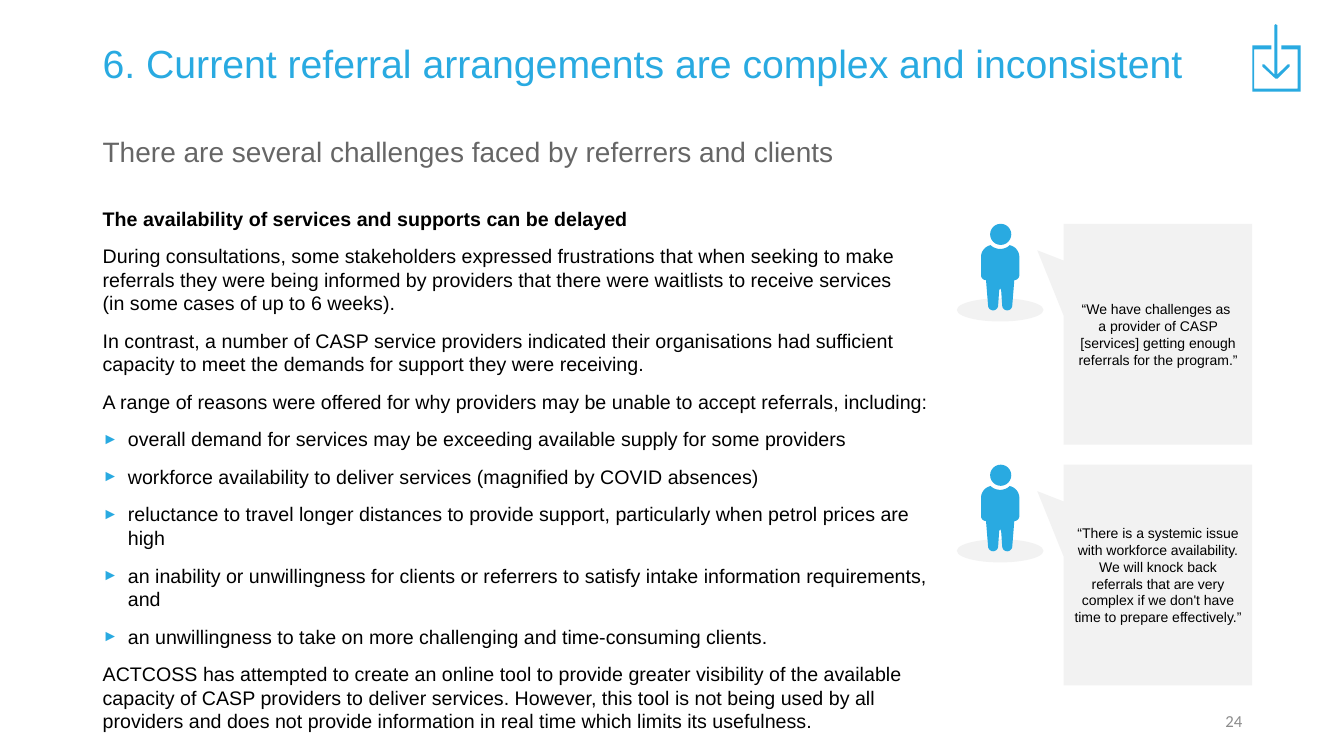
from math import cos, sin, radians
from lxml import etree
from pptx import Presentation
from pptx.dml.color import RGBColor
from pptx.enum.shapes import MSO_SHAPE as Shape
from pptx.enum.text import MSO_ANCHOR as Anchor, PP_ALIGN as Align
from pptx.oxml.ns import qn
from pptx.util import Inches, Pt

BLUE, PALE, BLACK = "29AAE1", "F2F2F2", "000000"


def paint(item, color):
    """Give a shape or font its hex colour, with no outline or shadow on shapes."""
    if hasattr(item, "shadow"):
        item.shadow.inherit = False
        item.line.fill.background()
        item.fill.solid()
        item.fill.fore_color.rgb = RGBColor.from_string(color)
    else:
        item.color.rgb = RGBColor.from_string(color)


def write(shape, lines, size, color, face="Arial", space=0, lead=1.0,
          align=Align.LEFT, anchor=Anchor.MIDDLE):
    """Fill a shape with paragraphs; a leading ► makes a bullet."""
    frame = shape.text_frame
    frame.word_wrap = True
    frame.vertical_anchor = anchor
    for i, line in enumerate(lines):
        para = frame.paragraphs[0] if i == 0 else frame.add_paragraph()
        para.text = line.removeprefix("►")
        para.alignment = align
        para.line_spacing = lead
        para.space_before = Pt(space if i else 0)
        if line.startswith("►"):
            props = para._p.get_or_add_pPr()
            props.set("marL", str(Inches(0.25)))
            props.set("indent", str(-Inches(0.25)))
            tint = etree.SubElement(props, qn("a:buClr"))
            etree.SubElement(tint, qn("a:srgbClr"), val=BLUE)
            etree.SubElement(props, qn("a:buSzPct"), val="80000")
            etree.SubElement(props, qn("a:buFont"), typeface="Arial")
            etree.SubElement(props, qn("a:buChar"), char="►")
        for run in para.runs:
            run.font.name = face
            run.font.size = Pt(size)
            paint(run.font, color)


deck = Presentation()
deck.slide_width, deck.slide_height = Inches(13.33), Inches(7.5)
slide = deck.slides.add_slide(deck.slide_layouts[6])
shapes = slide.shapes

# Headings, body and page number
title = shapes.add_textbox(Inches(0.92), Inches(0.4), Inches(11.5), Inches(0.51))
write(title, ["6. Current referral arrangements are complex and inconsistent"],
      28, BLUE, lead=0.9)

body = shapes.add_textbox(Inches(0.92), Inches(2), Inches(8.45), Inches(4.76))
write(body, [
    "The availability of services and supports can be delayed",
    "During consultations, some stakeholders expressed frustrations that when seeking to make "
    "referrals they were being informed by providers that there were waitlists to receive "
    "services \n(in some cases of up to 6 weeks).",
    "In contrast, a number of CASP service providers indicated their organisations had "
    "sufficient capacity to meet the demands for support they were receiving.",
    "A range of reasons were offered for why providers may be unable to accept referrals, "
    "including:",
    "►overall demand for services may be exceeding available supply for some providers",
    "►workforce availability to deliver services (magnified by COVID absences)",
    "►reluctance to travel longer distances to provide support, particularly when petrol "
    "prices are high",
    "►an inability or unwillingness for clients or referrers to satisfy intake information "
    "requirements, and",
    "►an unwillingness to take on more challenging and time-consuming clients.",
    "ACTCOSS has attempted to create an online tool to provide greater visibility of the "
    "available capacity of CASP providers to deliver services. However, this tool is not being "
    "used by all providers and does not provide information in real time which limits its "
    "usefulness.",
], 14, BLACK, space=10, anchor=Anchor.TOP)
body.text_frame.paragraphs[0].runs[0].font.bold = True

lead = shapes.add_textbox(Inches(0.92), Inches(1.16), Inches(11.5), Inches(0.68))
write(lead, ["There are several challenges faced by referrers and clients"], 20, "666666")

page = shapes.add_textbox(Inches(9.42), Inches(6.95), Inches(3), Inches(0.4))
write(page, ["24"], 12, "8C8C8C", face="Calibri", align=Align.RIGHT)

# Download icon: an open tray and an arrow
tray = [(12.71, 0.45), (12.9, 0.45), (12.9, 0.91), (12.42, 0.91), (12.42, 0.45), (12.61, 0.45),
        (12.61, 0.49), (12.44, 0.49), (12.44, 0.88), (12.87, 0.88), (12.87, 0.49), (12.71, 0.49)]
arrow = [(12.64, 0.25), (12.65, 0.24), (12.67, 0.25), (12.67, 0.74), (12.77, 0.64),
         (12.79, 0.64), (12.79, 0.66), (12.67, 0.78), (12.65, 0.78), (12.52, 0.66),
         (12.52, 0.64), (12.54, 0.64), (12.64, 0.74)]
pen = shapes.build_freeform(Inches(tray[0][0]), Inches(tray[0][1]))
pen.add_line_segments([(Inches(x), Inches(y)) for x, y in tray[1:]])
pen.move_to(Inches(arrow[0][0]), Inches(arrow[0][1]))
pen.add_line_segments([(Inches(x), Inches(y)) for x, y in arrow[1:]])
paint(pen.convert_to_shape(), BLUE)

# Right half of a person's body: arcs as centre x, centre y, radius, start and end angle
half = []
for cx, cy, r, start, end in [(0, -0.1, 0.14, 90, 49), (0.07, 0.12, 0.12, -80, 0),
                              (0.14, 0.3, 0.05, 0, 90), (0.07, 0.6, 0.05, 0, 180)]:
    for n in range(11):
        turn = radians(start + (end - start) * n / 10)
        half.append((cx + r * cos(turn), cy + r * sin(turn)))
half += [(0.01, 0.45), (0, 0.43)]
outline = half + [(-x, y) for x, y in reversed(half)]

# One person with a speech bubble per quote
quotes = [
    ["“We have challenges as \na provider of CASP [services] getting enough referrals "
     "for the program.”"],
    ["“There is a systemic issue with workforce availability.",
     "We will knock back referrals that are very complex if we don't have time to prepare "
     "effectively.”"],
]
mid = 9.92
for i, quote in enumerate(quotes):
    top = 2.22 + 2.39 * i
    person = shapes.add_group_shape().shapes
    floor = person.add_shape(Shape.OVAL, Inches(9.49), Inches(top + 0.74),
                             Inches(0.86), Inches(0.23))
    paint(floor, PALE)
    dots = [(Inches(mid + x), Inches(top + 0.21 + y)) for x, y in outline]
    pen = person.build_freeform(*dots[0])
    pen.add_line_segments(dots[1:])
    paint(pen.convert_to_shape(), BLUE)
    head = person.add_shape(Shape.OVAL, Inches(9.82), Inches(top), Inches(0.21), Inches(0.21))
    paint(head, BLUE)

    bubble = shapes.add_shape(Shape.RECTANGULAR_CALLOUT, Inches(10.55), Inches(top),
                              Inches(1.87), Inches(2.19))
    bubble.adjustments[0], bubble.adjustments[1] = -0.64, -0.38
    paint(bubble, PALE)
    write(bubble, quote, 10, BLACK, align=Align.CENTER)

deck.save("out.pptx")
